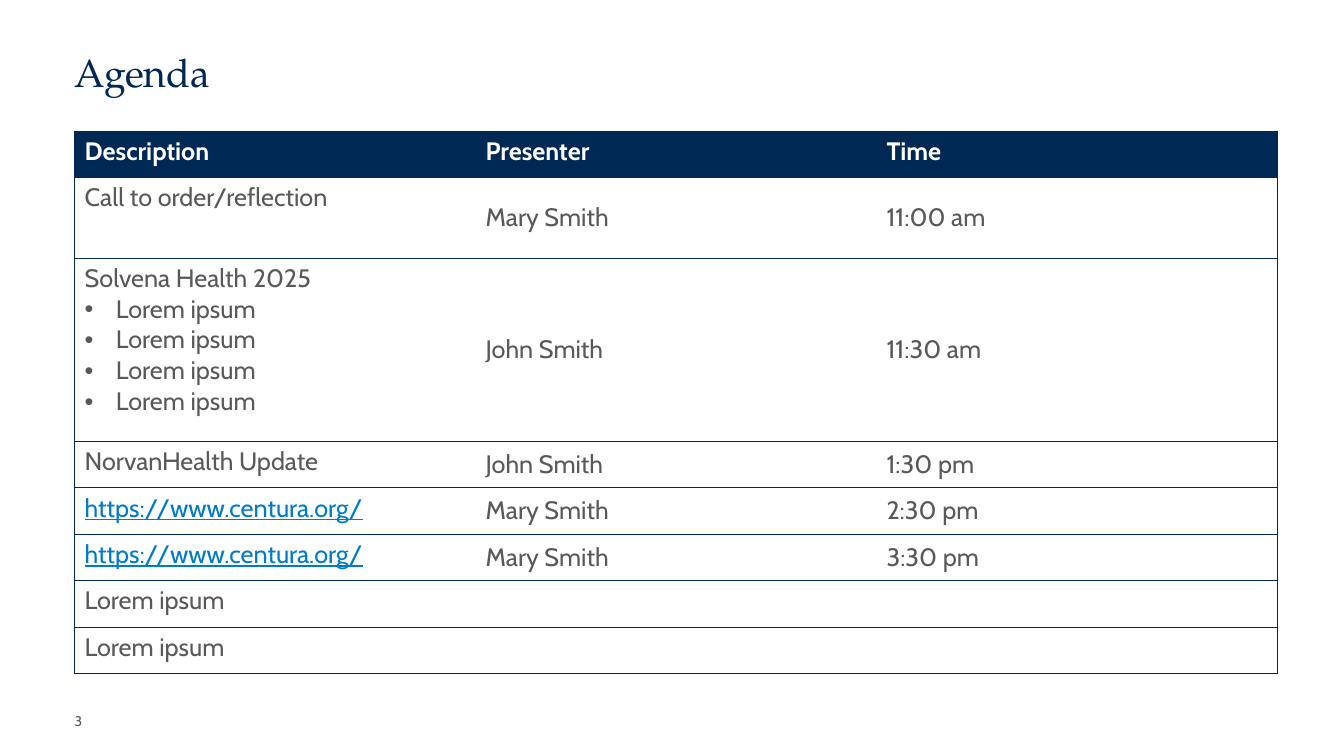
from typing import NamedTuple

from lxml.etree import SubElement
from pptx import Presentation
from pptx.dml.color import RGBColor
from pptx.enum.text import MSO_ANCHOR as Anchor
from pptx.oxml.ns import qn
from pptx.util import Inches, Pt

COLORS = {"navy": "002855", "gray": "58595B", "link": "007BC7", "white": "FFFFFF"}
BODY_FONT = "Cabin"
TITLE_FONT = "TeX Gyre Pagella"
LEFT, WIDTH = 0.74, 11.93
ROW_HEIGHT = 0.46
BULLET_INDENT = Inches(0.31)
HEADINGS = ("Description", "Presenter", "Time")


class AgendaItem(NamedTuple):
    description: str
    presenter: str = ""
    time: str = ""
    points: tuple[str, ...] = ()
    height: float = ROW_HEIGHT


AGENDA = (
    AgendaItem("Call to order/reflection", "Mary Smith", "11:00 am", height=0.8),
    AgendaItem("Solvena Health 2025", "John Smith", "11:30 am",
               points=("Lorem ipsum",) * 4, height=1.82),
    AgendaItem("NorvanHealth Update", "John Smith", "1:30 pm"),
    AgendaItem("https://www.centura.org/", "Mary Smith", "2:30 pm"),
    AgendaItem("https://www.centura.org/", "Mary Smith", "3:30 pm"),
    AgendaItem("Lorem ipsum"),
    AgendaItem("Lorem ipsum"),
)


def write(paragraph, text: str, *, size: float = 18, font: str = BODY_FONT,
          color: str = "gray", bold: bool = False, underline: bool = False,
          bullet: bool = False) -> None:
    if bullet:
        properties = paragraph._p.get_or_add_pPr()
        properties.set("marL", str(BULLET_INDENT))
        properties.set("indent", str(-BULLET_INDENT))
        SubElement(properties, qn("a:buFont"), typeface="Arial")
        SubElement(properties, qn("a:buChar"), char="•")
    run = paragraph.add_run()
    run.text = text
    run.font.size = Pt(size)
    run.font.name = font
    run.font.bold = bold
    run.font.underline = underline
    run.font.color.rgb = RGBColor.from_string(COLORS[color])


def add_label(slide, text: str, left: float, top: float, width: float,
              height: float, line_spacing: float = 1.0, **text_format) -> None:
    """Add a one-line text box without margins, centred vertically."""
    frame = slide.shapes.add_textbox(
        Inches(left), Inches(top), Inches(width), Inches(height)).text_frame
    frame.word_wrap = True
    frame.vertical_anchor = Anchor.MIDDLE
    frame.margin_left = frame.margin_right = 0
    frame.margin_top = frame.margin_bottom = 0
    frame.paragraphs[0].line_spacing = line_spacing
    write(frame.paragraphs[0], text, **text_format)


def style_cell(cell, column: int, fill: str) -> None:
    """Rule the cell above and below, and at the outer sides of the table."""
    ruled = {"L": column == 0, "R": column == len(HEADINGS) - 1, "T": True, "B": True}
    properties = cell._tc.get_or_add_tcPr()
    for side, visible in ruled.items():
        line = SubElement(properties, qn(f"a:ln{side}"), w=str(Pt(0.5)))
        if visible:
            line_fill = SubElement(line, qn("a:solidFill"))
            SubElement(line_fill, qn("a:srgbClr"), val=COLORS["navy"])
        else:
            SubElement(line, qn("a:noFill"))
    cell.fill.solid()
    cell.fill.fore_color.rgb = RGBColor.from_string(COLORS[fill])


def add_agenda(slide) -> None:
    heights = [ROW_HEIGHT] + [item.height for item in AGENDA]
    table = slide.shapes.add_table(
        len(heights), len(HEADINGS), Inches(LEFT), Inches(1.3),
        Inches(WIDTH), Inches(sum(heights))).table
    for row, height in zip(table.rows, heights):
        row.height = Inches(height)

    for column, heading in enumerate(HEADINGS):
        cell = table.cell(0, column)
        style_cell(cell, column, "navy")
        write(cell.text_frame.paragraphs[0], heading, color="white", bold=True)

    for row, item in enumerate(AGENDA, start=1):
        for column, text in enumerate((item.description, item.presenter, item.time)):
            cell = table.cell(row, column)
            style_cell(cell, column, "white")
            if column > 0:
                cell.vertical_anchor = Anchor.MIDDLE
            if text:
                is_link = text.startswith("https:")
                write(cell.text_frame.paragraphs[0], text,
                      color="link" if is_link else "gray", underline=is_link)
        for point in item.points:
            write(table.cell(row, 0).text_frame.add_paragraph(), point, bullet=True)


def main() -> None:
    deck = Presentation()
    deck.slide_width, deck.slide_height = Inches(13.33), Inches(7.5)
    slide = deck.slides.add_slide(deck.slide_layouts[6])
    add_label(slide, "3", LEFT, 6.95, 0.4, 0.4, size=10)
    add_label(slide, "Agenda", LEFT, 0.32, WIDTH, 0.85, line_spacing=0.9,
              size=28, font=TITLE_FONT, color="navy")
    add_agenda(slide)
    deck.save("out.pptx")


if __name__ == "__main__":
    main()
